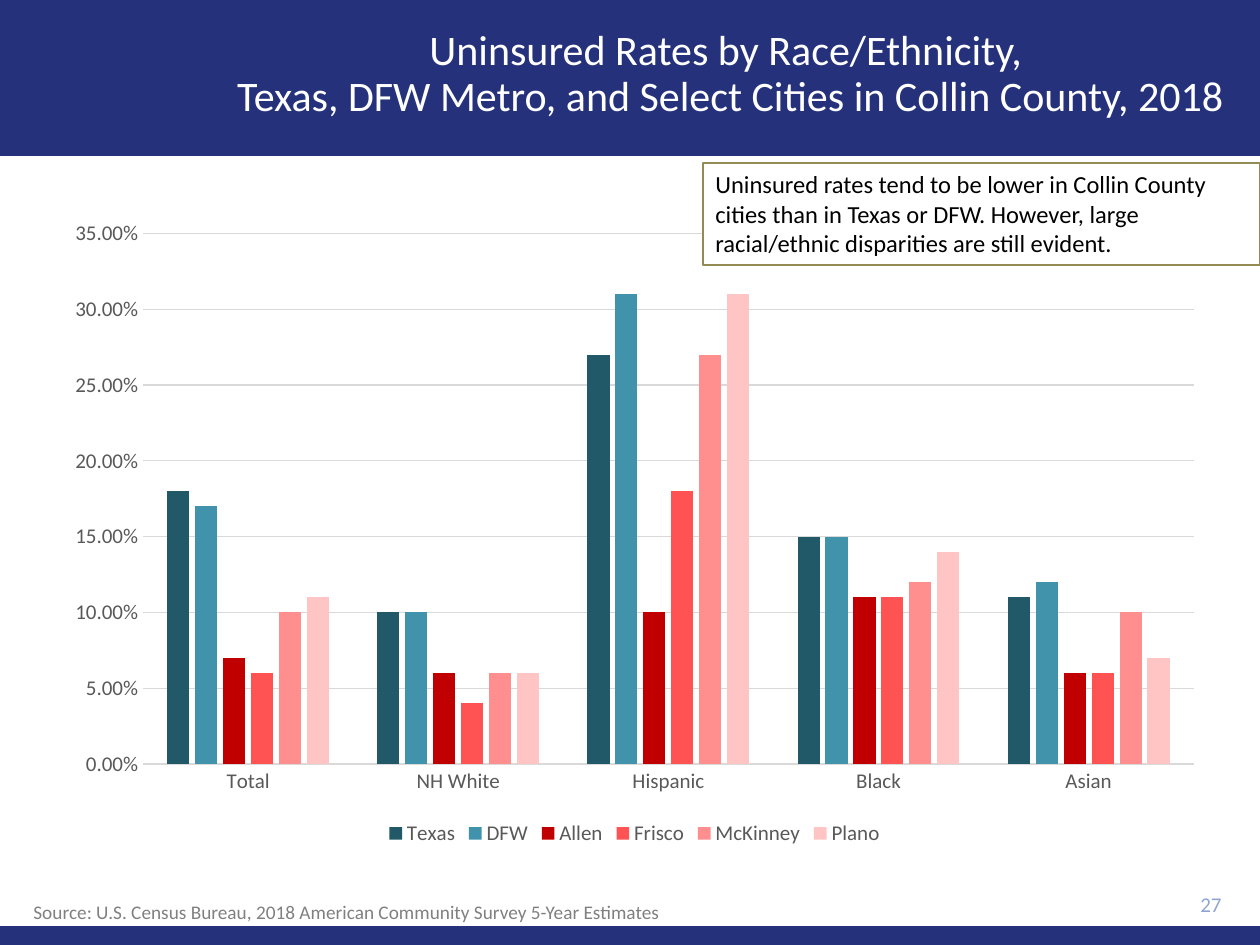
from collections import namedtuple
from dataclasses import dataclass

from pptx import Presentation
from pptx.chart.data import CategoryChartData
from pptx.dml.color import RGBColor
from pptx.enum.chart import XL_CHART_TYPE, XL_LEGEND_POSITION, XL_TICK_MARK
from pptx.enum.shapes import MSO_SHAPE
from pptx.enum.text import MSO_ANCHOR, PP_ALIGN
from pptx.util import Emu, Pt

COLUMNS = XL_CHART_TYPE.COLUMN_CLUSTERED
LEGEND_BOTTOM = XL_LEGEND_POSITION.BOTTOM
NO_TICKS = XL_TICK_MARK.NONE
RECTANGLE = MSO_SHAPE.RECTANGLE
TOP, MIDDLE = MSO_ANCHOR.TOP, MSO_ANCHOR.MIDDLE
LEFT, CENTER, RIGHT = PP_ALIGN.LEFT, PP_ALIGN.CENTER, PP_ALIGN.RIGHT

EMU_PER_PX = 914400 / 126
SLIDE_WIDTH, SLIDE_HEIGHT = 1260, 945
HEADER_HEIGHT, FOOTER_HEIGHT = 156, 19

Box = namedtuple("Box", "left top width height")


@dataclass(frozen=True)
class Theme:
    """Colours, type sizes and line width of the slide."""

    font: str = "Calibri"
    band: str = "25327B"
    light: str = "FFFFFF"
    ink: str = "000000"
    axis_text: str = "595959"
    grid: str = "D9D9D9"
    source: str = "808080"
    page: str = "8FA5D1"
    callout_line: str = "948A54"
    title_size: int = 24
    callout_size: int = 14
    label_size: int = 12
    source_size: int = 11
    hairline: float = 0.75


THEME = Theme()
CITIES = {
    "Texas": ("215968", (0.18, 0.1, 0.27, 0.15, 0.11)),
    "DFW": ("4093AA", (0.17, 0.1, 0.31, 0.15, 0.12)),
    "Allen": ("C00000", (0.07, 0.06, 0.1, 0.11, 0.06)),
    "Frisco": ("FF5353", (0.06, 0.04, 0.18, 0.11, 0.06)),
    "McKinney": ("FF8F8F", (0.1, 0.06, 0.27, 0.12, 0.1)),
    "Plano": ("FFC5C5", (0.11, 0.06, 0.31, 0.14, 0.07)),
}
GROUPS = ("Total", "NH White", "Hispanic", "Black", "Asian")
TITLE = (
    "Uninsured Rates by Race/Ethnicity, \v"
    "Texas, DFW Metro, and Select Cities in Collin County, 2018"
)
FINDING = (
    "Uninsured rates tend to be lower in Collin County cities than in Texas "
    "or DFW. However, large racial/ethnic disparities are still evident."
)
SOURCE = "Source: U.S. Census Bureau, 2018 American Community Survey 5-Year Estimates"


def px(length):
    """Turn pixels into EMU."""
    return Emu(round(length * EMU_PER_PX))


def place(box):
    """Return a box as four EMU lengths."""
    return [px(length) for length in box]


def style_font(font, size, color):
    """Give a font the theme face, a size and a colour."""
    font.name = THEME.font
    font.size = Pt(size)
    font.color.rgb = RGBColor.from_string(color)


def style_line(line, color):
    """Draw a line as a coloured hairline."""
    line.color.rgb = RGBColor.from_string(color)
    line.width = Pt(THEME.hairline)


def write(frame, text, size, color, align=LEFT, anchor=TOP, wrap=True):
    """Fill a text frame with one formatted paragraph."""
    frame.text = text
    frame.word_wrap = wrap
    frame.vertical_anchor = anchor
    paragraph = frame.paragraphs[0]
    paragraph.alignment = align
    for run in paragraph.runs:
        style_font(run.font, size, color)
    return paragraph


def add_panel(slide, box, fill):
    """Add a flat rectangle without an outline."""
    panel = slide.shapes.add_shape(RECTANGLE, *place(box))
    panel.shadow.inherit = False
    panel.fill.solid()
    panel.fill.fore_color.rgb = RGBColor.from_string(fill)
    panel.line.fill.background()
    return panel


def add_header(slide, box):
    """Add the top band with the title in front of it."""
    add_panel(slide, box, THEME.band)
    title = slide.shapes.title
    title.left, title.top, title.width, title.height = place(
        Box(box.left + 214, box.top + 12, box.width - 227, box.height - 30)
    )
    heading = write(
        title.text_frame, TITLE, THEME.title_size, THEME.light, CENTER, MIDDLE
    )
    heading.line_spacing = 0.9
    slide.shapes.element.append(title.element)


def add_rates_chart(slide, box):
    """Add the clustered columns of uninsured rates."""
    rates = CategoryChartData(number_format="0.00%")
    rates.categories = GROUPS
    for city, (_, values) in CITIES.items():
        rates.add_series(city, values)
    chart = slide.shapes.add_chart(COLUMNS, *place(box), rates).chart
    chart.has_title = False
    style_font(chart.font, THEME.label_size, THEME.ink)

    chart.has_legend = True
    chart.legend.position = LEGEND_BOTTOM
    chart.legend.include_in_layout = False
    style_font(chart.legend.font, THEME.label_size, THEME.axis_text)

    for axis in (chart.category_axis, chart.value_axis):
        axis.major_tick_mark = axis.minor_tick_mark = NO_TICKS
        style_font(axis.tick_labels.font, THEME.label_size, THEME.axis_text)
    style_line(chart.category_axis.format.line, THEME.grid)
    value_axis = chart.value_axis
    value_axis.format.line.fill.background()
    style_line(value_axis.major_gridlines.format.line, THEME.grid)
    value_axis.minimum_scale, value_axis.maximum_scale = 0, 0.35
    value_axis.major_unit = 0.05
    value_axis.tick_labels.number_format = "0.00%"
    value_axis.tick_labels.number_format_is_linked = False

    plot = chart.plots[0]
    plot.vary_by_categories = False
    plot.gap_width, plot.overlap = 219, -27
    for series, (color, _) in zip(plot.series, CITIES.values()):
        series.invert_if_negative = False
        series.format.fill.solid()
        series.format.fill.fore_color.rgb = RGBColor.from_string(color)


def add_callout(slide, box):
    """Add the outlined box with the main finding."""
    callout = add_panel(slide, box, THEME.light)
    style_line(callout.line, THEME.callout_line)
    write(callout.text_frame, FINDING, THEME.callout_size, THEME.ink)


def add_footer(slide, box):
    """Add the bottom band with the source and page number above it."""
    add_panel(slide, box, THEME.band)
    source = slide.shapes.add_textbox(*place(Box(box.left + 21, box.top - 32, 660, 36)))
    write(source.text_frame, SOURCE, THEME.source_size, THEME.source, wrap=False)
    page = slide.shapes.add_textbox(
        *place(Box(box.left + box.width - 138, box.top - 43, 112, 43))
    )
    write(page.text_frame, "27", THEME.label_size, THEME.page, RIGHT, MIDDLE)


def main():
    """Build and save the slide."""
    deck = Presentation()
    deck.slide_width, deck.slide_height = px(SLIDE_WIDTH), px(SLIDE_HEIGHT)
    slide = deck.slides.add_slide(deck.slide_layouts.get_by_name("Title Only"))
    add_header(slide, Box(0, 0, SLIDE_WIDTH, HEADER_HEIGHT))
    add_rates_chart(slide, Box(52, 208, 1165, 643))
    footer_top = SLIDE_HEIGHT - FOOTER_HEIGHT
    add_footer(slide, Box(0, footer_top, SLIDE_WIDTH, FOOTER_HEIGHT))
    add_callout(slide, Box(703, 163, SLIDE_WIDTH - 703, 102))
    deck.save("out.pptx")


if __name__ == "__main__":
    main()
